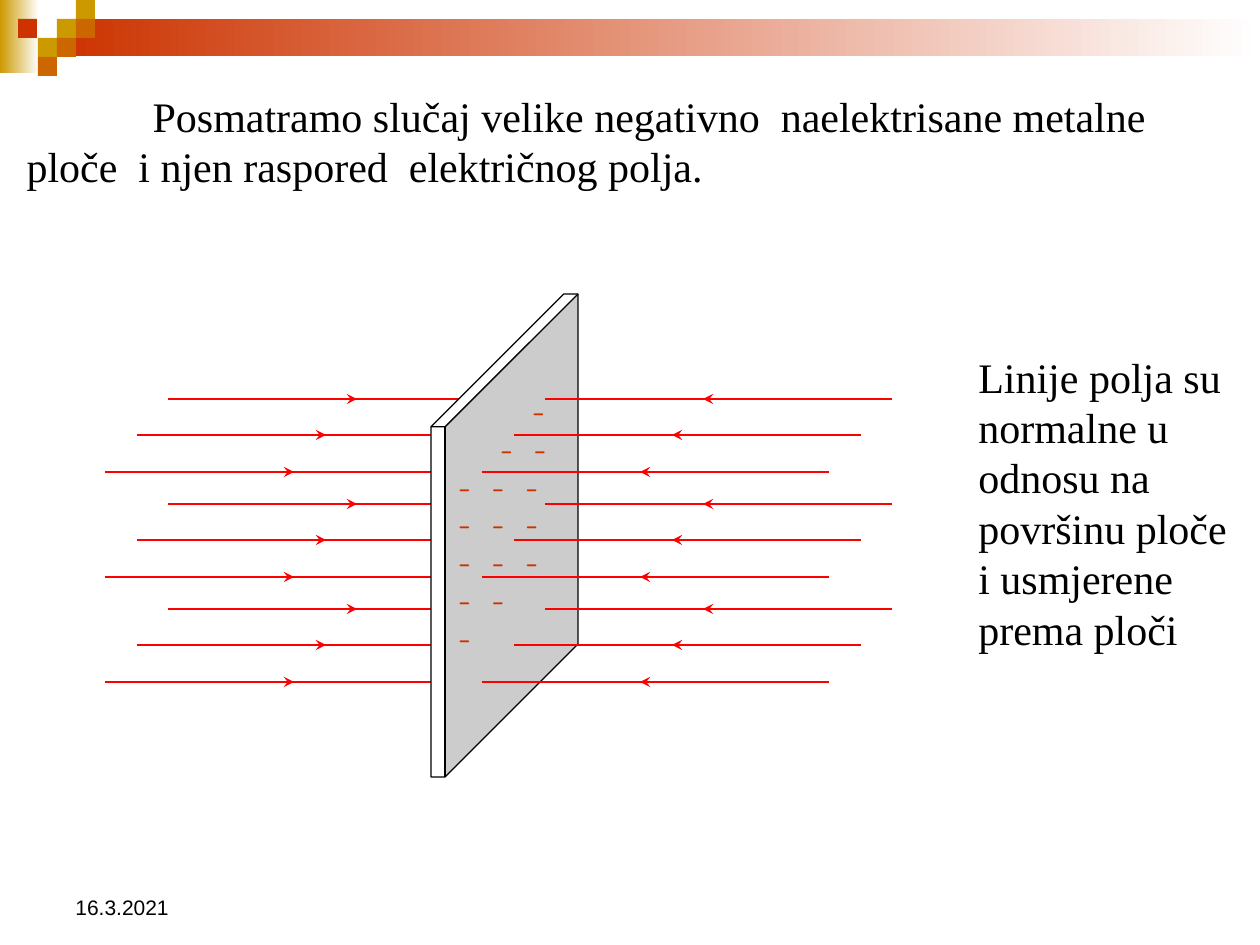
from pptx import Presentation
from pptx.dml.color import RGBColor
from pptx.enum.shapes import MSO_CONNECTOR, MSO_SHAPE
from pptx.enum.text import MSO_ANCHOR, MSO_AUTO_SIZE, PP_ALIGN
from pptx.oxml.ns import qn
from pptx.util import Emu, Pt
from lxml.etree import SubElement

EMU_PER_PX = 914400 // 126
BLACK = RGBColor(0x00, 0x00, 0x00)
WHITE = RGBColor(0xFF, 0xFF, 0xFF)
GOLD = RGBColor(0xCC, 0x99, 0x00)
ORANGE = RGBColor(0xCC, 0x66, 0x00)
BRICK = RGBColor(0xCC, 0x33, 0x00)
RED = RGBColor(0xFF, 0x00, 0x00)

SQUARE = 19
SQUARES = [(57, 19, GOLD), (76, 0, GOLD), (76, 19, ORANGE), (38, 38, GOLD),
           (18, 19, BRICK), (57, 38, ORANGE), (38, 57, ORANGE)]
# Each row of charges: its indent and its signs
CHARGES = [(74, "-"), (42, "-  -"), (0, "-  -  -"), (0, "-  -  -"),
           (0, "-  -  -"), (0, "-  -"), (0, "-")]
INTRO = ("Posmatramo slučaj velike negativno  naelektrisane metalne ploče"
         "  i njen raspored  električnog polja.")
REMARK = ("Linije polja su normalne u odnosu na površinu ploče "
          "i usmjerene prema ploči")


def px(*lengths):
    return [Emu(length * EMU_PER_PX) for length in lengths]


def add_block(slide, box, color, fade=False):
    block = slide.shapes.add_shape(MSO_SHAPE.RECTANGLE, *px(*box))
    block.shadow.inherit = False
    block.line.fill.background()
    if fade:
        block.fill.gradient()
        block.fill.gradient_angle = 0
        for stop, stop_color in zip(block.fill.gradient_stops, (color, WHITE)):
            stop.color.rgb = stop_color
    else:
        block.fill.solid()
        block.fill.fore_color.rgb = color


def add_text(slide, box, text):
    label = slide.shapes.add_textbox(*px(*box))
    label.text_frame.text = text
    return label


def format_text(label, font_name, size, color=BLACK, anchor=MSO_ANCHOR.TOP):
    frame = label.text_frame
    frame.word_wrap = True
    frame.auto_size = MSO_AUTO_SIZE.NONE
    frame.vertical_anchor = anchor
    for paragraph in frame.paragraphs:
        paragraph.alignment = PP_ALIGN.LEFT
        for run in paragraph.runs:
            run.font.name = font_name
            run.font.size = Pt(size)
            run.font.color.rgb = color


def add_line(slide, start, end, y, arrow=False):
    line = slide.shapes.add_connector(MSO_CONNECTOR.STRAIGHT, *px(start, y, end, y))
    line.line.color.rgb = RED
    line.line.width = Pt(0.75)
    if arrow:
        SubElement(line.line._get_or_add_ln(), qn("a:tailEnd"), type="stealth")
    SubElement(line._element.spPr, qn("a:effectLst"))


def add_field(slide, start, direction):
    """Nine field lines, each an arrow continued by a plain line."""
    for group in range(3):
        for step in range(3):
            y = 399 + 105 * group + 147 * step // 4
            x = start - 63 * step // 2
            add_line(slide, x, x + direction * 189, y, arrow=True)
            add_line(slide, x + direction * 157, x + direction * 347, y)


def add_plate(slide):
    plate = slide.shapes.add_shape(MSO_SHAPE.CUBE, *px(431, 294, 147, 483))
    plate.adjustments[0] = 0.904
    plate.shadow.inherit = False
    plate.fill.solid()
    plate.fill.fore_color.rgb = WHITE
    plate.line.color.rgb = BLACK
    plate.line.width = Pt(0.75)


def add_charges(slide):
    charges = add_text(slide, (458, 391, 120, 266),
                       "\n".join(signs for _, signs in CHARGES))
    frame = charges.text_frame
    frame.margin_left = frame.margin_right = 0
    frame.margin_top = frame.margin_bottom = 0
    for paragraph, (indent, _) in zip(frame.paragraphs, CHARGES):
        paragraph._p.get_or_add_pPr().set("marL", str(indent * EMU_PER_PX))
    format_text(charges, "Comic Neue", 18, BRICK)


def add_intro(slide):
    intro = slide.shapes.title
    intro.left, intro.top, intro.width, intro.height = px(14, 84, 1228, 115)
    intro.text_frame.text = INTRO
    first_line = intro.text_frame.paragraphs[0]._p.get_or_add_pPr()
    first_line.set("indent", str(126 * EMU_PER_PX))
    format_text(intro, "Times New Roman", 24)


def main():
    prs = Presentation()
    prs.slide_width, prs.slide_height = px(1260, 945)
    slide = prs.slides.add_slide(prs.slide_layouts[5])

    # Header decoration
    add_block(slide, (0, 0, 39, 73), GOLD, fade=True)
    add_block(slide, (57, 19, 1203, 37), BRICK, fade=True)
    for x, y, color in SQUARES:
        add_block(slide, (x, y, SQUARE, SQUARE), color)

    # Date and introduction
    date = add_text(slide, (63, 861, 294, 65), "16.3.2021")
    format_text(date, "Arial", 12, anchor=MSO_ANCHOR.BOTTOM)
    add_intro(slide)

    # Charged plate between the two halves of the field
    add_field(slide, 168, 1)
    add_plate(slide)
    add_charges(slide)
    add_field(slide, 892, -1)

    # Remark on the field lines
    remark = add_text(slide, (966, 345, 276, 318), REMARK)
    format_text(remark, "Times New Roman", 24)

    prs.save("out.pptx")


if __name__ == "__main__":
    main()
